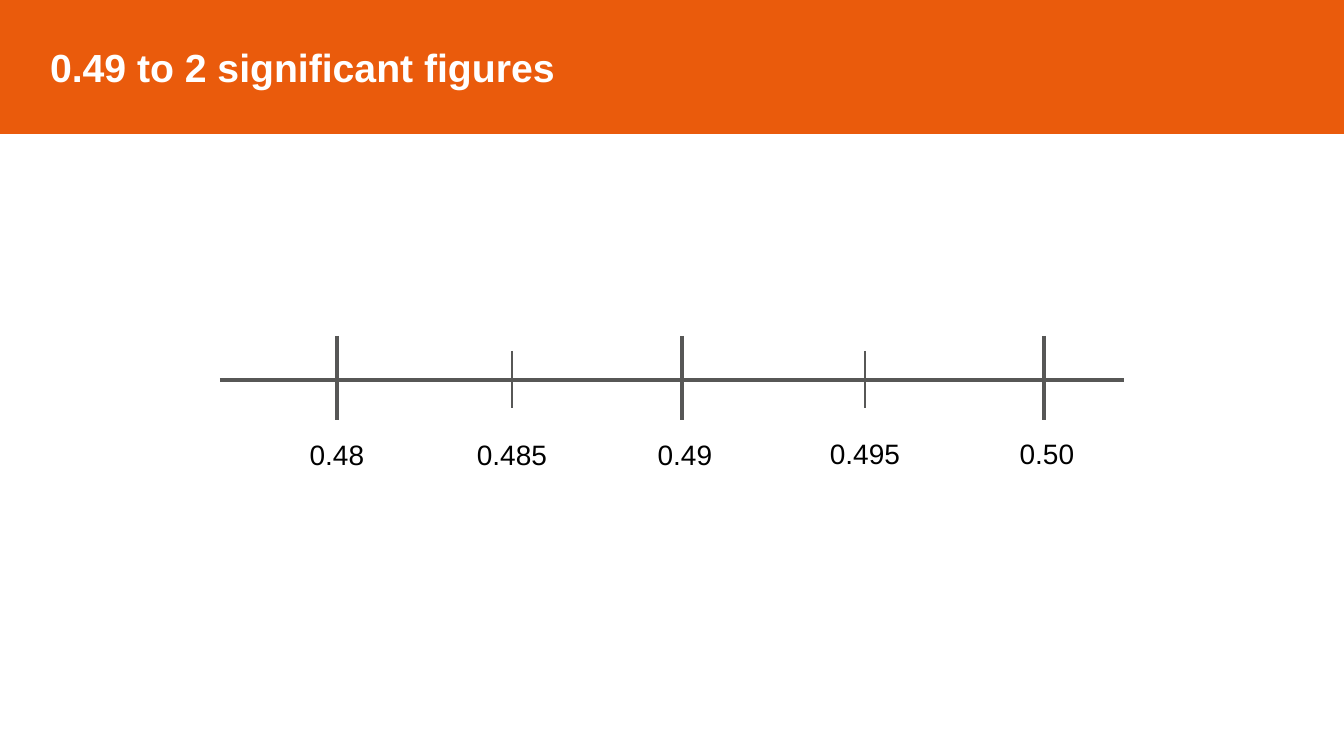
import pptx
import pptx.util
import pptx.dml.color
import pptx.enum.shapes
import pptx.enum.text
import pptx.oxml.ns
import lxml.etree

SCALE = 914400 / 100.8  # EMU in one px


def px(n):
    return pptx.util.Emu(round(n * SCALE))


def color(code):
    return pptx.dml.color.RGBColor.from_string(code)


class Board:
    font = "Arial"
    orange, gray, white, black = "EA5B0C", "575756", "FFFFFF", "000000"

    def __init__(self, slide):
        self.slide = slide

    def style(self, para, size, code, bold=False):
        for run in para.runs:
            run.font.name = self.font
            run.font.size = pptx.util.Pt(size)
            run.font.bold = bold
            run.font.color.rgb = color(code)

    def title(self, text, width, height):
        bar = self.slide.shapes.title
        bar.left, bar.top, bar.width, bar.height = px(0), px(0), px(width), px(height)
        bar.fill.solid()
        bar.fill.fore_color.rgb = color(self.orange)
        bar.line.color.rgb = color(self.orange)
        bar.line.width = pptx.util.Pt(1)
        frame = bar.text_frame
        frame.text = text
        frame.auto_size = pptx.enum.text.MSO_AUTO_SIZE.NONE
        frame.vertical_anchor = pptx.enum.text.MSO_ANCHOR.MIDDLE
        frame.margin_left = px(50)
        para = frame.paragraphs[0]
        para.alignment = pptx.enum.text.PP_ALIGN.LEFT
        self.style(para, 28, self.white, True)

    def line(self, x1, y1, x2, y2, weight):
        line = self.slide.shapes.add_connector(
            pptx.enum.shapes.MSO_CONNECTOR.STRAIGHT, px(x1), px(y1), px(x2), px(y2))
        line.line.color.rgb = color(self.gray)
        line.line.width = pptx.util.Pt(weight)
        props = line._element.spPr
        lxml.etree.SubElement(props, pptx.oxml.ns.qn("a:effectLst"))

    def label(self, text, mid, top, width=90, height=44):
        box = self.slide.shapes.add_textbox(
            px(mid - width / 2), px(top), px(width), px(height))
        frame = box.text_frame
        frame.word_wrap = True
        frame.margin_left = frame.margin_right = 0
        frame.text = text
        para = frame.paragraphs[0]
        para.alignment = pptx.enum.text.PP_ALIGN.CENTER
        self.style(para, 20, self.black)


def main():
    deck = pptx.Presentation()
    deck.slide_width, deck.slide_height = px(1344), px(756)
    board = Board(deck.slides.add_slide(deck.slide_layouts[5]))

    # Title bar
    board.title("0.49 to 2 significant figures", 1344, 133)

    # Number line
    board.line(220, 380, 1124, 380, 3)

    # Ticks and labels: text, tick x, label centre, label top
    marks = [
        ("0.48", 337, 337, 433),
        ("0.485", 512, 512, 433),
        ("0.49", 682, 685, 433),
        ("0.495", 865, 865, 432),
        ("0.50", 1044, 1047, 432),
    ]
    for i, (text, x, mid, top) in enumerate(marks):
        if i % 2:
            board.line(x, 351, x, 408, 2)
        else:
            board.line(x, 336, x, 420, 3)
        board.label(text, mid, top)

    deck.save("out.pptx")


if __name__ == "__main__":
    main()
